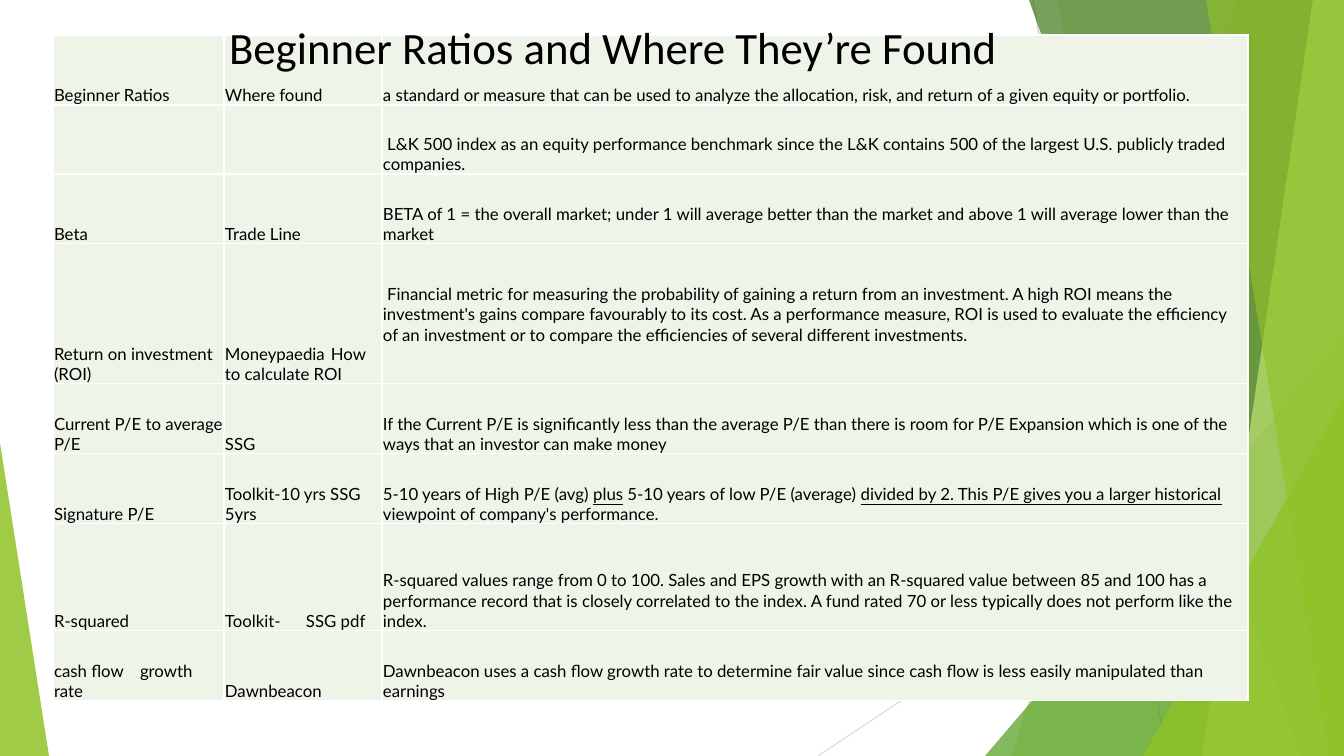
from lxml.etree import SubElement
from pptx import Presentation
from pptx.dml.color import RGBColor
from pptx.enum.shapes import MSO_CONNECTOR, MSO_SHAPE
from pptx.enum.text import MSO_ANCHOR, PP_ALIGN
from pptx.oxml.ns import qn
from pptx.util import Pt

PX = 12192000 / 1344
BLACK = RGBColor(0x00, 0x00, 0x00)
CELL = RGBColor(0xEE, 0xF4, 0xE8)
GREY = RGBColor(0xBF, 0xBF, 0xBF)
PALE_GREY = RGBColor(0xD9, 0xD9, 0xD9)
LIME = RGBColor(0x90, 0xC2, 0x26)
GREEN = RGBColor(0x54, 0xA0, 0x21)
DARK_GREEN = RGBColor(0x3F, 0x78, 0x19)
PALE_LIME = RGBColor(0xC0, 0xE4, 0x74)


def px(n):
    return round(n * PX)


def paint(sp, color, opacity):
    """Fill a shape with a partly transparent colour and no outline."""
    sp.shadow.inherit = False
    sp.line.fill.background()
    sp.fill.solid()
    sp.fill.fore_color.rgb = color
    clr = sp._element.spPr.find(qn("a:solidFill"))[0]
    SubElement(clr, qn("a:alpha")).set("val", str(opacity * 1000))


prs = Presentation()
prs.slide_width, prs.slide_height = px(1344), px(756)
s = prs.slides.add_slide(prs.slide_layouts[5])

# Background facets, from back to front
for x1, y1, x2, y2, color in [(1033, 0, 1167, 756, GREY),
                              (1344, 406, 818, 756, PALE_GREY)]:
    line = s.shapes.add_connector(MSO_CONNECTOR.STRAIGHT,
                                  px(x1), px(y1), px(x2), px(y2))
    line.line.color.rgb = color
    line.line.width = Pt(0.75)
    SubElement(line._element.spPr, qn("a:effectLst"))

# Bands: top-left x, bottom-left x. Triangles: left, top, width, peak.
facets = [
    ((1238, 1012), LIME, 30),
    ((1058, 1192), LIME, 20),
    ((985, 336, 359, 1), GREEN, 72),
    ((1029, 1301), DARK_GREEN, 70),
    ((1313, 1202), PALE_LIME, 70),
    ((1206, 1329), LIME, 65),
    ((1143, 396, 201, 1), LIME, 80),
    ((0, 443, 49, 0), LIME, 85),
]
for geometry, color, opacity in facets:
    if len(geometry) == 2:
        top_x, bottom_x = geometry
        fb = s.shapes.build_freeform(top_x, 0, scale=PX)
        fb.add_line_segments([(1344, 0), (1344, 756), (bottom_x, 756)])
        sp = fb.convert_to_shape()
    else:
        left, top, width, peak = geometry
        sp = s.shapes.add_shape(MSO_SHAPE.ISOSCELES_TRIANGLE, px(left),
                                px(top), px(width), px(756 - top))
        sp.adjustments[0] = peak
    paint(sp, color, opacity)

# Underscores enclose underlined words
rows = [
    (70, "Beginner Ratios", "Where found",
     "a standard or measure that can be used to analyze the allocation, risk, "
     "and return of a given equity or portfolio."),
    (69, "", "",
     " L&K 500 index as an equity performance benchmark since the L&K contains "
     "500 of the largest U.S. publicly traded companies."),
    (70, "Beta", "Trade Line",
     "BETA of 1 = the overall market; under 1 will average better than the "
     "market and above 1 will average lower than the market"),
    (140, "Return on investment (ROI)", "Moneypaedia\tHow to calculate ROI",
     " Financial metric for measuring the probability of gaining a return from "
     "an investment. A high ROI means the investment's gains compare "
     "favourably to its cost. As a performance measure, ROI is used to "
     "evaluate the efficiency of an investment or to compare the efficiencies "
     "of several different investments."),
    (70, "Current P/E to average P/E", "SSG",
     "If the Current P/E is significantly less than the average P/E than there "
     "is room for P/E Expansion which is one of the ways that an investor can "
     "make money"),
    (70, "Signature P/E", "Toolkit-10 yrs SSG 5yrs",
     "5-10 years of High P/E (avg) _plus_ 5-10 years of low P/E (average) "
     "_divided by 2. This P/E gives you a larger historical viewpoint of "
     "company's performance._"),
    (107, "R-squared", "Toolkit-\tSSG pdf",
     "R-squared values range from 0 to 100. Sales and EPS growth with an "
     "R-squared value between 85 and 100 has a performance record that is "
     "closely correlated to the index. A fund rated 70 or less typically does "
     "not perform like the index."),
    (70, "cash flow\tgrowth rate", "Dawnbeacon",
     "Dawnbeacon uses a cash flow growth rate to determine fair value since "
     "cash flow is less easily manipulated than earnings"),
]
tab_stops = {"Moneypaedia": 106, "Toolkit-": 81, "cash flow": 86}
widths = [171, 158, 866]

frame = s.shapes.add_table(len(rows), len(widths), px(53), px(35),
                           px(sum(widths)), px(sum(row[0] for row in rows)))
table = frame.table
table.first_row = table.horz_banding = False
for column, width in zip(table.columns, widths):
    column.width = px(width)

for i, (height, *texts) in enumerate(rows):
    table.rows[i].height = px(height)
    for j, text in enumerate(texts):
        cell = table.cell(i, j)
        cell.fill.solid()
        cell.fill.fore_color.rgb = CELL
        cell.margin_left = cell.margin_right = cell.margin_top = px(1)
        cell.margin_bottom = 0
        roi_text = text.startswith(" Financial")
        cell.vertical_anchor = MSO_ANCHOR.MIDDLE if roi_text else MSO_ANCHOR.BOTTOM
        if not text:
            continue
        p = cell.text_frame.paragraphs[0]
        for k, part in enumerate(text.split("_")):
            if part:
                r = p.add_run()
                r.text = part
                r.font.name = "Lato"
                r.font.size = Pt(12)
                r.font.color.rgb = BLACK
                r.font.underline = k % 2 == 1
        if "\t" in text:
            tabs = SubElement(p._p.get_or_add_pPr(), qn("a:tabLst"))
            stop = px(tab_stops[text.split("\t")[0]])
            SubElement(tabs, qn("a:tab"), pos=str(stop), algn="l")

# The title lies over the top of the table
title = s.shapes.title
title.left, title.top, title.width, title.height = px(219), px(15), px(796), px(65)
s.shapes._spTree.append(title._element)
tf = title.text_frame
tf.text = "Beginner Ratios and Where They’re Found"
tf.word_wrap = False
tf.vertical_anchor = MSO_ANCHOR.TOP
p = tf.paragraphs[0]
p.alignment = PP_ALIGN.LEFT
font = p.runs[0].font
font.name = "Calibri"
font.size = Pt(32)
font.color.rgb = BLACK

prs.save("out.pptx")
